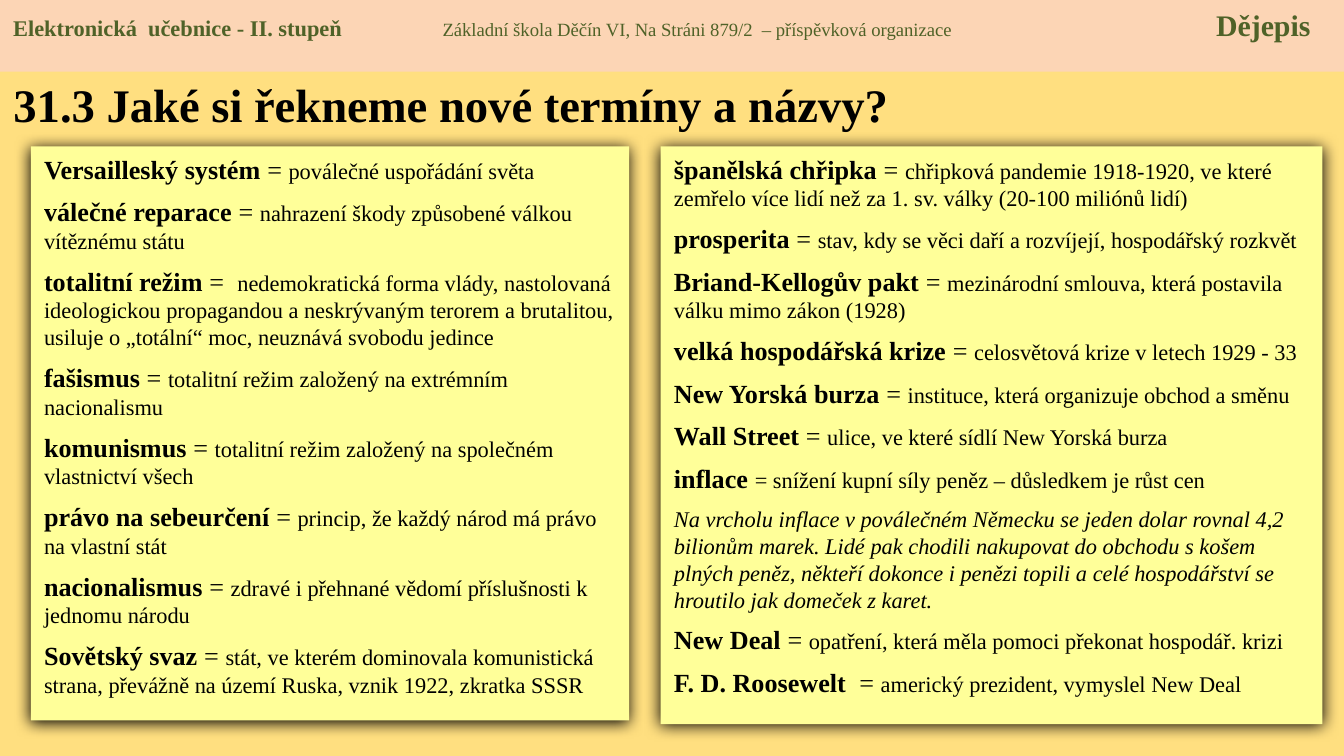
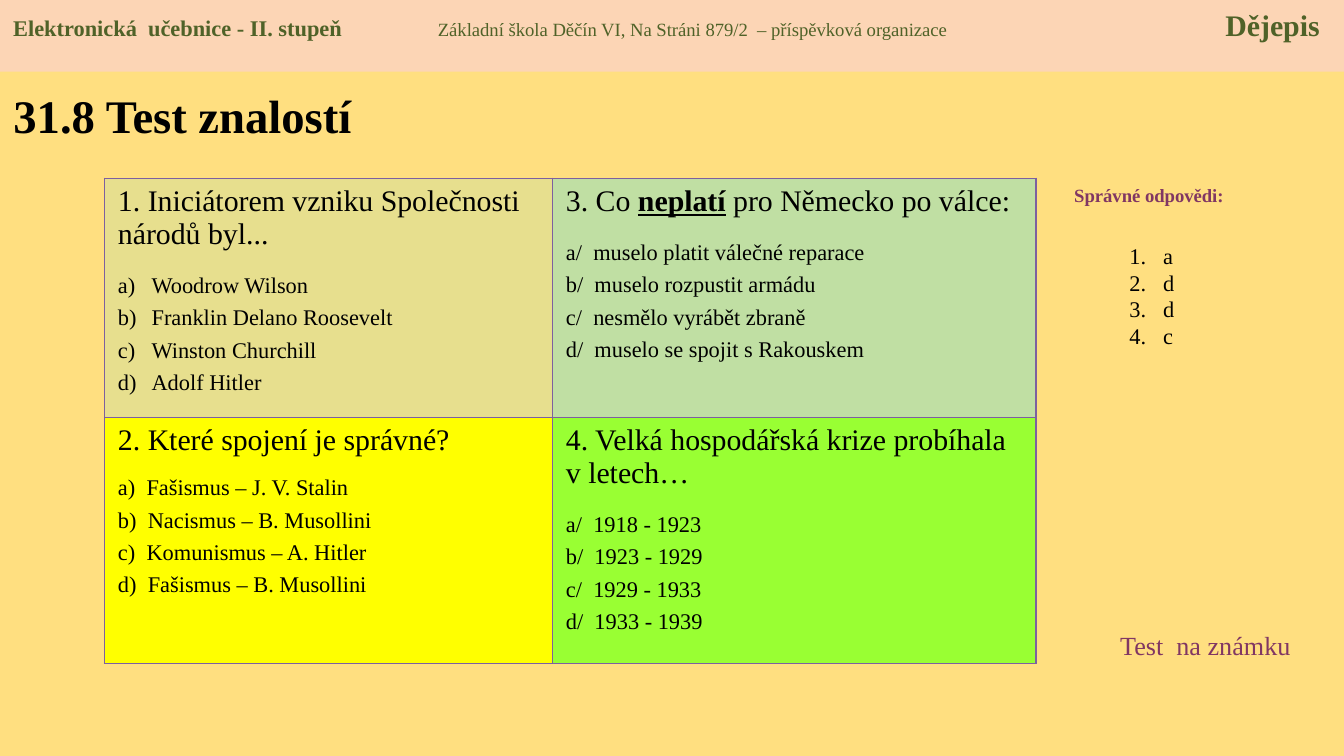
from pptx import Presentation
from pptx.dml.color import RGBColor
from pptx.enum.shapes import MSO_SHAPE
from pptx.enum.text import MSO_ANCHOR, PP_ALIGN
from pptx.oxml import parse_xml
from pptx.oxml.ns import nsdecls
from pptx.util import Pt

FONT = "Times New Roman"
BLACK, GREEN, PLUM = "000000", "4F6228", "813763"
BACKGROUND, BAND, PANEL, BORDER = "FFDF80", "FCD5B5", "FFFF99", "7D60A0"

LEFT_TERMS = [
    "Versailleský systém |= |poválečné uspořádání světa",
    "válečné reparace |= |nahrazení škody způsobené válkou vítěznému státu",
    "totalitní režim |=  |nedemokratická forma vlády, nastolovaná ideologickou propagandou "
    "a neskrývaným terorem a brutalitou, usiluje o „totální“ moc, neuznává svobodu jedince",
    "fašismus| = |totalitní režim založený na extrémním nacionalismu",
    "komunismus |= |totalitní režim založený na společném vlastnictví všech",
    "právo na sebeurčení |= |princip, že každý národ má právo na vlastní stát",
    "nacionalismus |= |zdravé i přehnané vědomí příslušnosti k jednomu národu",
    "Sovětský svaz |= |stát, ve kterém dominovala komunistická strana, "
    "převážně na území Ruska, vznik 1922, zkratka SSSR",
]
RIGHT_TERMS = [
    "španělská chřipka |= |chřipková pandemie 1918-1920, ve které zemřelo "
    "více lidí než za 1. sv. války (20-100 miliónů lidí)",
    "prosperita| = |stav, kdy se věci daří a rozvíjejí, hospodářský rozkvět",
    "Briand-Kellogův pakt |= |mezinárodní smlouva, která postavila válku mimo zákon (1928)",
    "velká hospodářská krize |= |celosvětová krize v letech 1929 - 33",
    "New Yorská burza |= |instituce, která organizuje obchod a směnu",
    "Wall Street |= |ulice, ve které sídlí New Yorská burza",
    "inflace ||= snížení kupní síly peněz – důsledkem je růst cen",
    "||Na vrcholu inflace v poválečném Německu se jeden dolar rovnal 4,2 bilionům marek. "
    "Lidé pak chodili nakupovat do obchodu s košem plných peněz, někteří dokonce i penězi "
    "topili a celé hospodářství se hroutilo jak domeček z karet.",
    "New Deal |= |opatření, která měla pomoci překonat hospodář. krizi",
    "F. D. Roosewelt | = |americký prezident, vymyslel New Deal",
]
QUESTIONS = [
    [("1. Iniciátorem vzniku Společnosti národů byl...", 12, "E7DF8E", "alphaLcParenR",
      ["Woodrow Wilson", "Franklin Delano Roosevelt", "Winston Churchill", "Adolf Hitler"]),
     ("3. Co |neplatí| pro Německo po válce:", 12, "C0DFA3", None,
      ["a/  muselo platit válečné reparace", "b/  muselo rozpustit armádu",
       "c/  nesmělo vyrábět zbraně", "d/  muselo se spojit s Rakouskem"])],
    [("2. Které spojení je správné?", 10, "FFFF00", None,
      ["a)  Fašismus – J. V. Stalin", "b)  Nacismus – B. Musollini",
       "c)  Komunismus – A. Hitler", "d)  Fašismus – B. Musollini"]),
     ("4. Velká hospodářská krize probíhala v letech…", 12, "99FF33", None,
      ["a/  1918 - 1923", "b/  1923 - 1929", "c/  1929 - 1933", "d/  1933 - 1939"])],
]


def rgb(value):
    """Turn a hex string into a colour."""
    return RGBColor.from_string(value)


class Deck:
    """Holds the shared style and the current slide."""

    def __init__(self):
        """Start a widescreen presentation."""
        self.prs = Presentation()
        self.prs.slide_width, self.prs.slide_height = Pt(720), Pt(405)
        self.s = None

    def style(self, r, size, color=BLACK, bold=False, italic=False, underline=False):
        """Format one run."""
        f = r.font
        f.name, f.size, f.bold, f.italic = FONT, Pt(size), bold, italic
        f.underline = underline
        f.color.rgb = rgb(color)

    def run(self, p, text, size, **look):
        """Append a formatted run to a paragraph."""
        r = p.add_run()
        r.text = text
        self.style(r, size, **look)

    def paragraph(self, tf, index):
        """Return the first paragraph or add the next one."""
        return tf.add_paragraph() if index else tf.paragraphs[0]

    def number(self, p, scheme):
        """Give a paragraph automatic numbering with a hanging indent."""
        pPr = p._p.get_or_add_pPr()
        pPr.set("marL", str(Pt(18)))
        pPr.set("indent", str(-Pt(18)))
        pPr.append(parse_xml(f'<a:buFont {nsdecls("a")} typeface="+mj-lt"/>'))
        pPr.append(parse_xml(f'<a:buAutoNum {nsdecls("a")} type="{scheme}"/>'))

    def slide(self, title, width, height, tabs):
        """Add a slide with background, title and header band."""
        self.s = self.prs.slides.add_slide(self.prs.slide_layouts[5])
        fill = self.s.background.fill
        fill.solid()
        fill.fore_color.rgb = rgb(BACKGROUND)
        sp = self.s.shapes.title
        sp.left, sp.top, sp.width, sp.height = Pt(0), Pt(38), Pt(width), Pt(height)
        tf = sp.text_frame
        tf.text = title
        tf.vertical_anchor = MSO_ANCHOR.MIDDLE
        tf.paragraphs[0].alignment = PP_ALIGN.LEFT
        self.style(tf.paragraphs[0].runs[0], 25, bold=True)
        self.band(*tabs)

    def rectangle(self, x, y, w, h, color):
        """Add a plain filled rectangle with top-anchored text."""
        sp = self.s.shapes.add_shape(MSO_SHAPE.RECTANGLE, Pt(x), Pt(y), Pt(w), Pt(h))
        sp.shadow.inherit = False
        sp.fill.solid()
        sp.fill.fore_color.rgb = rgb(color)
        sp.line.fill.background()
        sp.text_frame.word_wrap = True
        sp.text_frame.vertical_anchor = MSO_ANCHOR.TOP
        return sp

    def band(self, school, subject):
        """Add the header band with its two tab stops."""
        p = self.rectangle(0, 0, 720, 38.5, BAND).text_frame.paragraphs[0]
        p.alignment = PP_ALIGN.LEFT
        p._p.get_or_add_pPr().append(parse_xml(
            f'<a:tabLst {nsdecls("a")}><a:tab pos="{Pt(school)}" algn="l"/>'
            f'<a:tab pos="{Pt(subject)}" algn="r"/></a:tabLst>'))
        self.run(p, "Elektronická  učebnice - II. stupeň\t", 12, color=GREEN, bold=True)
        self.run(p, "Základní škola Děčín VI, Na Stráni 879/2  – příspěvková organizace\t",
                 10, color=GREEN)
        self.run(p, "Dějepis", 16, color=GREEN, bold=True)

    def panel(self, x, w, h, terms):
        """Add a shadowed panel of terms and definitions."""
        sp = self.rectangle(x, 78.5, w, h, PANEL)
        sp._element.spPr.find("{*}effectLst").append(parse_xml(
            f'<a:outerShdw {nsdecls("a")} blurRad="{Pt(8.5)}" dist="{Pt(1)}" dir="5400000" '
            'algn="t" rotWithShape="0"><a:srgbClr val="000000"/></a:outerShdw>'))
        for i, entry in enumerate(terms):
            p = self.paragraph(sp.text_frame, i)
            p.alignment, p.space_after = PP_ALIGN.LEFT, Pt(6)
            term, equals, definition = entry.split("|")
            if term:
                self.run(p, term, 14, bold=True)
            if equals:
                self.run(p, equals, 14)
            self.run(p, definition, 12, italic=not term)

    def text(self, x, y, w, h, lines, size, color=BLACK, bold=False,
             align=PP_ALIGN.LEFT, scheme=None):
        """Add a text box, numbered if a scheme is given."""
        tf = self.s.shapes.add_textbox(Pt(x), Pt(y), Pt(w), Pt(h)).text_frame
        tf.word_wrap = True
        for i, line in enumerate(lines):
            p = self.paragraph(tf, i)
            p.text, p.alignment = line, align
            self.style(p.runs[0], size, color, bold)
            if scheme:
                self.number(p, scheme)

    def cell(self, cell, question, gap, color, scheme, options):
        """Fill one table cell with a question and its options."""
        cell.fill.solid()
        cell.fill.fore_color.rgb = rgb(color)
        tcPr = cell._tc.get_or_add_tcPr()
        for i, side in enumerate(("lnL", "lnR", "lnT", "lnB")):
            tcPr.insert(i, parse_xml(
                f'<a:{side} {nsdecls("a")} w="{Pt(0.75)}"><a:solidFill>'
                f'<a:srgbClr val="{BORDER}"/></a:solidFill></a:{side}>'))
        tf = cell.text_frame
        p = tf.paragraphs[0]
        p.space_after = Pt(gap)
        for i, part in enumerate(question.split("|")):
            self.run(p, part, 16, bold=i == 1, underline=i == 1)
        for option in options:
            p = tf.add_paragraph()
            p.text, p.space_after = option, Pt(4)
            self.style(p.runs[0], 12)
            if scheme:
                self.number(p, scheme)

    def quiz(self, x, y, widths, heights, questions):
        """Add the table of questions."""
        table = self.s.shapes.add_table(len(heights), len(widths), Pt(x), Pt(y),
                                        Pt(sum(widths)), Pt(sum(heights))).table
        table.first_row = table.horz_banding = False
        for column, width in zip(table.columns, widths):
            column.width = Pt(width)
        for row, height, items in zip(table.rows, heights, questions):
            row.height = Pt(height)
            for cell, item in zip(row.cells, items):
                self.cell(cell, *item)


def main():
    """Build both slides and save them."""
    deck = Deck()
    deck.slide("31.3 Jaké si řekneme nové termíny a názvy?", 506, 35.5, (230, 695))
    deck.panel(16.5, 320.5, 307.5, LEFT_TERMS)
    deck.panel(354, 354.5, 309.5, RIGHT_TERMS)

    deck.slide("31.8 Test znalostí", 220, 47, (227.5, 700))
    deck.quiz(56, 95.5, (240, 259), (128, 132), QUESTIONS)
    deck.text(559, 95, 113, 19.5, ["Správné odpovědi:"], 10, PLUM, True, PP_ALIGN.CENTER)
    deck.text(598, 126, 40, 80, ["a", "d", "d", "c"], 12, scheme="arabicPeriod")
    deck.text(593, 333.5, 113, 24.5, ["Test  na známku"], 14, PLUM)
    deck.prs.save("out.pptx")


if __name__ == "__main__":
    main()
